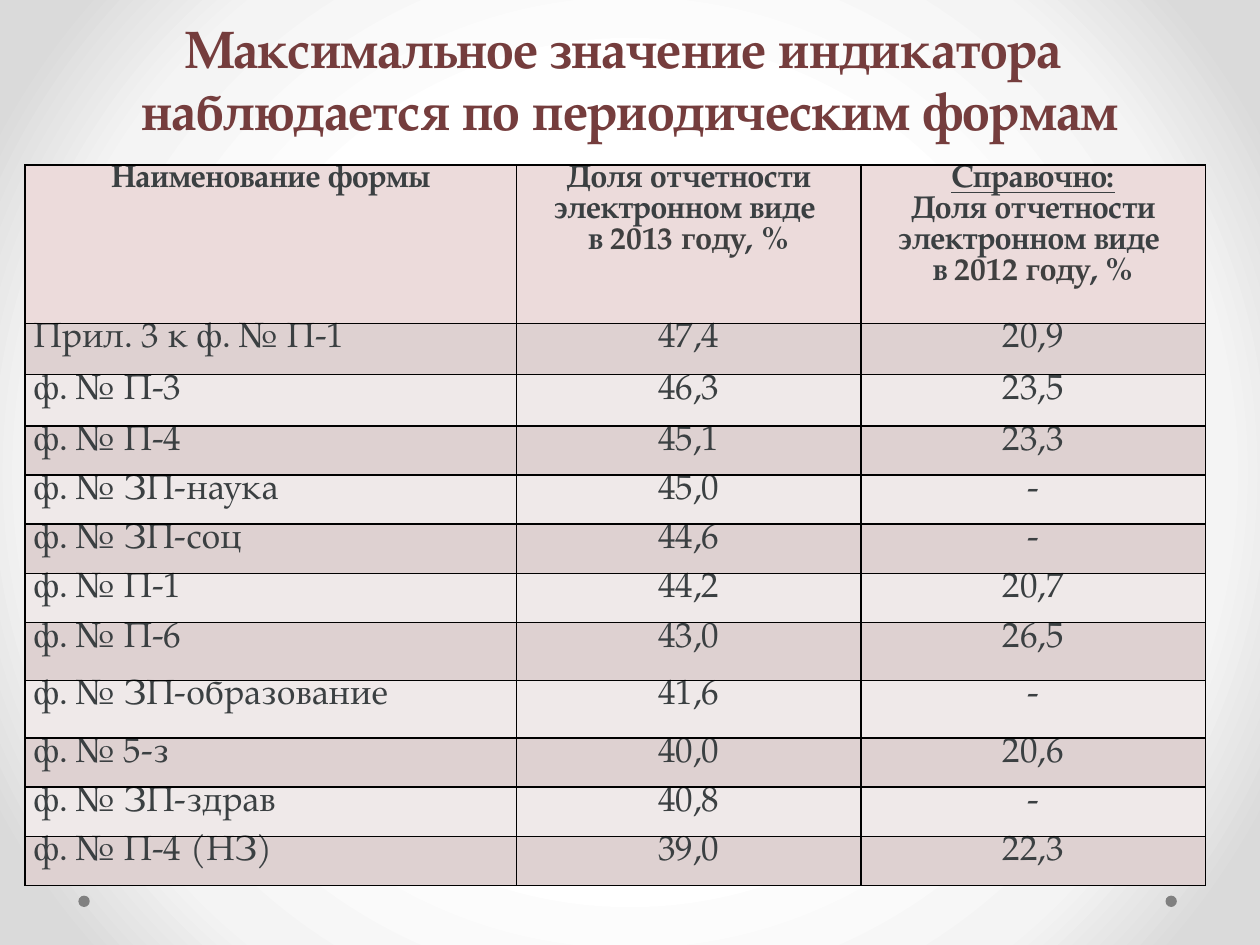
from dataclasses import dataclass

from pptx import Presentation
from pptx.dml.color import RGBColor
from pptx.enum.shapes import MSO_SHAPE
from pptx.enum.text import MSO_ANCHOR, MSO_AUTO_SIZE, PP_ALIGN
from pptx.oxml import parse_xml
from pptx.oxml.ns import nsdecls
from pptx.util import Pt


@dataclass(frozen=True)
class Theme:
    font: str = "TeX Gyre Pagella"
    title_color: str = "753D3D"
    text_color: str = "3B4042"
    year_color: str = "404040"
    dot_color: str = "808080"
    border_color: str = "000000"
    header_fill: str = "ECDBDB"
    row_fills: tuple = ("DED1D1", "EFE9E9")
    background: tuple = ((0, "FFFFFF"), (50, "FFFFFF"), (76, "F4F4F4"),
                         (92, "DADADA"), (100, "DADADA"))
    title_size: float = 30
    header_size: float = 18
    body_size: float = 20


THEME = Theme()


def write(paragraph, text, *, size, color, bold=False, underline=False,
          align=PP_ALIGN.LEFT, spacing=0.985):
    """Append text to a paragraph; a newline becomes a line break."""
    paragraph.alignment = align
    paragraph.line_spacing = Pt(size * spacing)
    for index, line in enumerate(text.split("\n")):
        if index:
            paragraph.add_line_break()
        if not line:
            continue
        run = paragraph.add_run()
        run.text = line
        font = run.font
        font.name, font.size = THEME.font, Pt(size)
        font.bold, font.underline = bold, underline
        font.color.rgb = RGBColor.from_string(color)


class SlideBuilder:
    def __init__(self, presentation, theme):
        self.theme = theme
        self.slide = presentation.slides.add_slide(presentation.slide_layouts[5])

    def background(self):
        fill = self.slide.background.fill
        fill.gradient()
        stops = "".join(
            f'<a:gs pos="{position * 1000}"><a:srgbClr val="{color}"/></a:gs>'
            for position, color in self.theme.background)
        gradient = parse_xml(
            f'<a:gradFill {nsdecls("a")} rotWithShape="1"><a:gsLst>{stops}</a:gsLst>'
            '<a:path path="circle"><a:fillToRect l="50000" t="50000" r="50000" b="50000"/>'
            '</a:path></a:gradFill>')
        properties = self.slide.background._cSld.bg.bgPr
        properties.replace(properties[0], gradient)

    def dot(self, left, top, size):
        shape = self.slide.shapes.add_shape(
            MSO_SHAPE.OVAL, Pt(left), Pt(top), Pt(size), Pt(size))
        shape.shadow.inherit = False
        shape.fill.solid()
        shape.fill.fore_color.rgb = RGBColor.from_string(self.theme.dot_color)
        shape.line.fill.background()

    def title(self, text, left, top, width, height):
        shape = self.slide.shapes.title
        shape.left, shape.top = Pt(left), Pt(top)
        shape.width, shape.height = Pt(width), Pt(height)
        frame = shape.text_frame
        frame.auto_size = MSO_AUTO_SIZE.NONE
        frame.word_wrap = True
        frame.vertical_anchor = MSO_ANCHOR.BOTTOM
        frame.margin_top = frame.margin_bottom = 0
        write(frame.paragraphs[0], text, size=self.theme.title_size, bold=True,
              color=self.theme.title_color, align=PP_ALIGN.CENTER, spacing=1.18)

    def table(self, left, top, widths, heights):
        table = self.slide.shapes.add_table(
            len(heights), len(widths), Pt(left), Pt(top),
            Pt(sum(widths)), Pt(sum(heights))).table
        for column, width in zip(table.columns, widths):
            column.width = Pt(width)
        for row, height in zip(table.rows, heights):
            row.height = Pt(height)
        return table

    def cell(self, cell, parts, fill, **style):
        """Fill a cell with (text, format) parts that share a base style."""
        cell.margin_left = cell.margin_right = Pt(5)
        cell.margin_top = cell.margin_bottom = 0
        for text, changes in parts:
            write(cell.text_frame.paragraphs[0], text,
                  **{"color": self.theme.text_color, **style, **changes})
        properties = cell._tc.get_or_add_tcPr()
        for side in ("lnL", "lnR", "lnT", "lnB"):
            properties.append(parse_xml(
                f'<a:{side} {nsdecls("a")} w="12700"><a:solidFill>'
                f'<a:srgbClr val="{self.theme.border_color}"/></a:solidFill></a:{side}>'))
        cell.fill.solid()
        cell.fill.fore_color.rgb = RGBColor.from_string(fill)


def share_heading(year):
    return [("Доля отчетности электронном виде \nв ", {}),
            (f"{year} году", {"color": THEME.year_color}),
            (", %", {})]


HEADINGS = [
    [("Наименование формы", {})],
    share_heading(2013),
    [("Справочно:\n", {"underline": True})] + share_heading(2012),
]

# Form name, share in 2013, share in 2012
FORMS = [
    ("Прил. 3 к ф. № П-1", "47,4", "20,9"),
    ("ф. № П-3", "46,3", "23,5"),
    ("ф. № П-4", "45,1", "23,3"),
    ("ф. № ЗП-наука", "45,0", "-"),
    ("ф. № ЗП-соц", "44,6", "-"),
    ("ф. № П-1", "44,2", "20,7"),
    ("ф. № П-6", "43,0", "26,5"),
    ("ф. № ЗП-образование", "41,6", "-"),
    ("ф. № 5-з", "40,0", "20,6"),
    ("ф. № ЗП-здрав", "40,8", "-"),
    ("ф. № П-4 (НЗ)", "39,0", "22,3"),
]


def main():
    presentation = Presentation()
    presentation.slide_width, presentation.slide_height = Pt(720), Pt(540)
    builder = SlideBuilder(presentation, THEME)

    # Background, corner dots and title
    builder.background()
    for left in (44.8, 666):
        builder.dot(left, 511.8, 6.5)
    builder.title("Максимальное значение индикатора \nнаблюдается по периодическим формам",
                  14.4, 15.1, 691.9, 65.5)

    # Table grid
    heights = [90.5] + [29.3] * 2 + [28.1] * 4 + [33] * 2 + [28.1] * 3
    table = builder.table(14.2, 94.3, [281, 196.8, 196.8], heights)

    # Header row
    for column, parts in enumerate(HEADINGS):
        builder.cell(table.cell(0, column), parts, THEME.header_fill,
                     size=THEME.header_size, bold=True, align=PP_ALIGN.CENTER)

    # Banded rows
    for row, values in enumerate(FORMS, start=1):
        fill = THEME.row_fills[(row - 1) % 2]
        for column, text in enumerate(values):
            builder.cell(table.cell(row, column), [(text, {})], fill,
                         size=THEME.body_size,
                         align=PP_ALIGN.CENTER if column else PP_ALIGN.LEFT)

    presentation.save("out.pptx")


if __name__ == "__main__":
    main()
